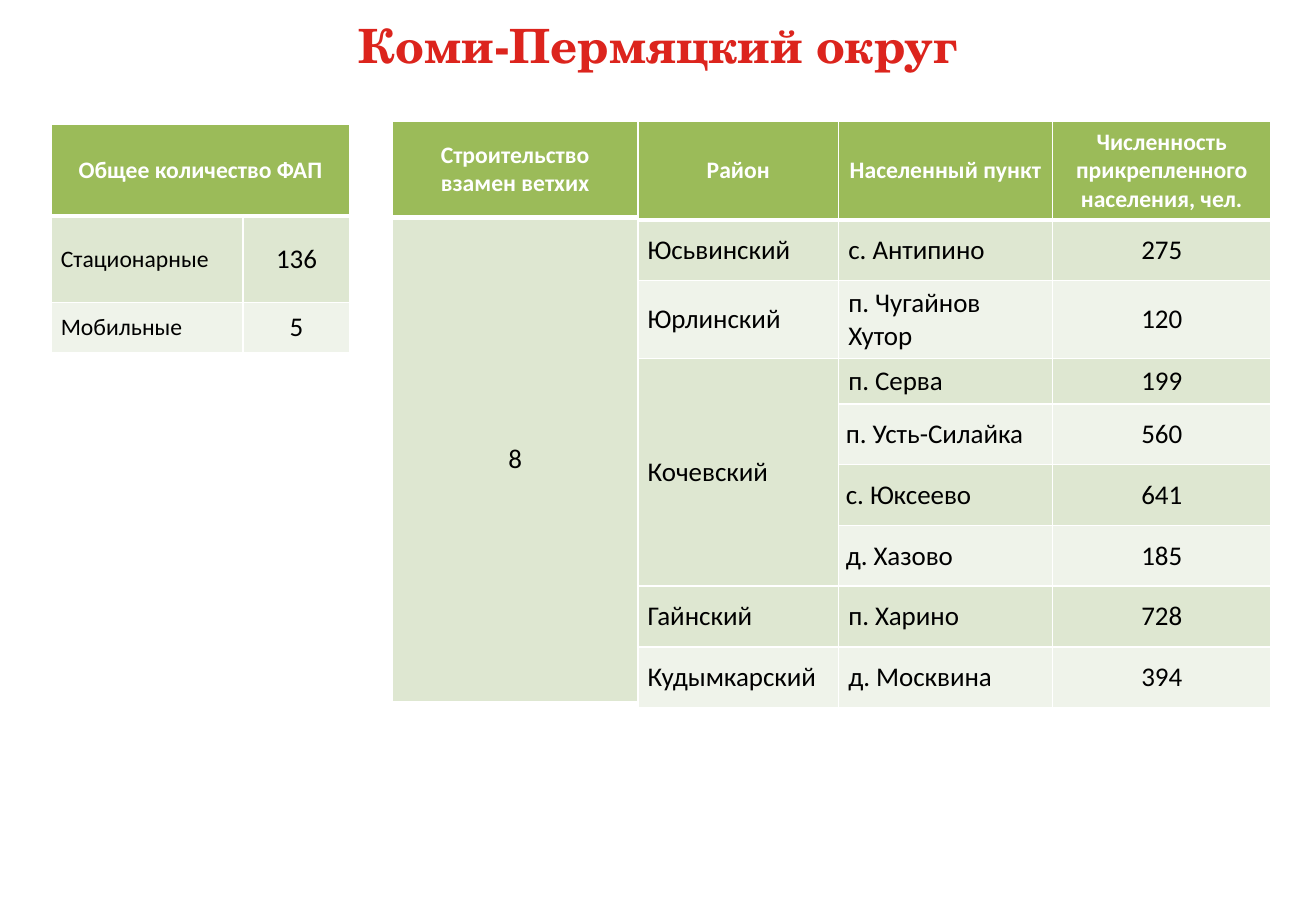
from lxml import etree
from pptx import Presentation
from pptx import util as u
from pptx.dml.color import RGBColor
from pptx.enum import text
from pptx.oxml.ns import qn

WIDTH, HEIGHT = u.Inches(10.83), u.Inches(7.5)
GRID = 100  # columns and rows across the slide


def colour(hex_value):
    return RGBColor.from_string(hex_value)


def columns(count):
    return round(WIDTH * count / GRID)


def rows(count):
    return round(HEIGHT * count / GRID)


class DistrictSlide:
    RED, WHITE, BLACK = "DC241D", "FFFFFF", "000000"
    HEADER, BANDS = "9BBB59", ("EFF3EA", "DEE7D1")
    BODY_FONT, TITLE_FONT = "Calibri", "TeX Gyre Schola"

    def __init__(self, presentation):
        self.slide = presentation.slides.add_slide(presentation.slide_layouts[6])

    def label(self, text_frame, words, size, font, hex_value, bold, centred):
        text_frame.text = words
        paragraph = text_frame.paragraphs[0]
        paragraph.alignment = text.PP_ALIGN.CENTER if centred else text.PP_ALIGN.LEFT
        for run in paragraph.runs:
            run.font.size = u.Pt(size)
            run.font.name = font
            run.font.bold = bold
            run.font.color.rgb = colour(hex_value)

    def title(self, words, top, height):
        box = self.slide.shapes.add_textbox(0, rows(top), WIDTH, rows(height))
        box.text_frame.word_wrap = True
        box.text_frame.vertical_anchor = text.MSO_ANCHOR.MIDDLE
        self.label(box.text_frame, words, 28, self.TITLE_FONT, self.RED, True, True)

    def borders(self, cell, bottom):
        properties = cell._tc.get_or_add_tcPr()
        for side, width in (("L", 1), ("R", 1), ("T", 1), ("B", bottom)):
            line = etree.SubElement(properties, qn(f"a:ln{side}"), w=str(u.Pt(width)))
            fill = etree.SubElement(line, qn("a:solidFill"))
            etree.SubElement(fill, qn("a:srgbClr"), val=self.WHITE)

    def table(self, left, top, widths, heights, values, centred,
              sizes, merges=(), tight=()):
        """centred and sizes go by column; tight lists cells with narrow insets."""
        table = self.slide.shapes.add_table(
            len(heights), len(widths), columns(left), rows(top),
            columns(sum(widths)), rows(sum(heights))).table
        for column, width in zip(table.columns, widths):
            column.width = columns(width)
        for row, height in zip(table.rows, heights):
            row.height = rows(height)
        for first, last in merges:
            table.cell(*first).merge(table.cell(*last))

        for i, row_values in enumerate(values):
            header = i == 0
            for j, words in enumerate(row_values):
                cell = table.cell(i, j)
                self.borders(cell, 3 if header else 1)
                cell.fill.solid()
                cell.fill.fore_color.rgb = colour(
                    self.HEADER if header else self.BANDS[i % 2])
                cell.vertical_anchor = text.MSO_ANCHOR.MIDDLE
                side, edge = (0.06, 0.01) if (i, j) in tight else (0.08, 0.05)
                cell.margin_left = cell.margin_right = u.Inches(side)
                cell.margin_top = cell.margin_bottom = u.Inches(edge)
                if words:
                    self.label(cell.text_frame, words, 14 if header else sizes[j],
                               self.BODY_FONT, self.WHITE if header else self.BLACK,
                               header, header or centred[j])


def main():
    presentation = Presentation()
    presentation.slide_width, presentation.slide_height = WIDTH, HEIGHT
    district = DistrictSlide(presentation)

    # Number of medical posts
    district.table(
        3.88, 13.6, [14.59, 8.13], [10.13, 9.47, 5.47],
        [["Общее количество ФАП", ""],
         ["Стационарные", "136"],
         ["Мобильные", "5"]],
        centred=[False, True], sizes=[14, 16], merges=[((0, 0), (0, 1))])

    # Replacement of dilapidated posts
    district.table(
        29.82, 13.33, [18.65], [10.53, 53.2],
        [["Строительство взамен ветхих"], ["8"]],
        centred=[True], sizes=[16])

    # Settlements and population
    district.table(
        48.48, 13.33, [15.24, 16.25, 16.62],
        [10.67, 6.67, 8.53, 4.93] + [6.67] * 5,
        [["Район", "Населенный пункт", "Численность прикрепленного населения, чел."],
         ["Юсьвинский", "с. Антипино", "275"],
         ["Юрлинский", "п. Чугайнов Хутор", "120"],
         ["Кочевский", "п. Серва", "199"],
         ["", "п. Усть-Силайка", "560"],
         ["", "с. Юксеево", "641"],
         ["", "д. Хазово", "185"],
         ["Гайнский", "п. Харино", "728"],
         ["Кудымкарский", "д. Москвина", "394"]],
        centred=[False, False, True], sizes=[16] * 3,
        merges=[((3, 0), (6, 0))],
        tight=[(i, j) for i in (4, 5, 6) for j in (1, 2)])

    # Title
    district.title("Коми-Пермяцкий округ", 1.07, 7.73)

    presentation.save("out.pptx")


if __name__ == "__main__":
    main()
